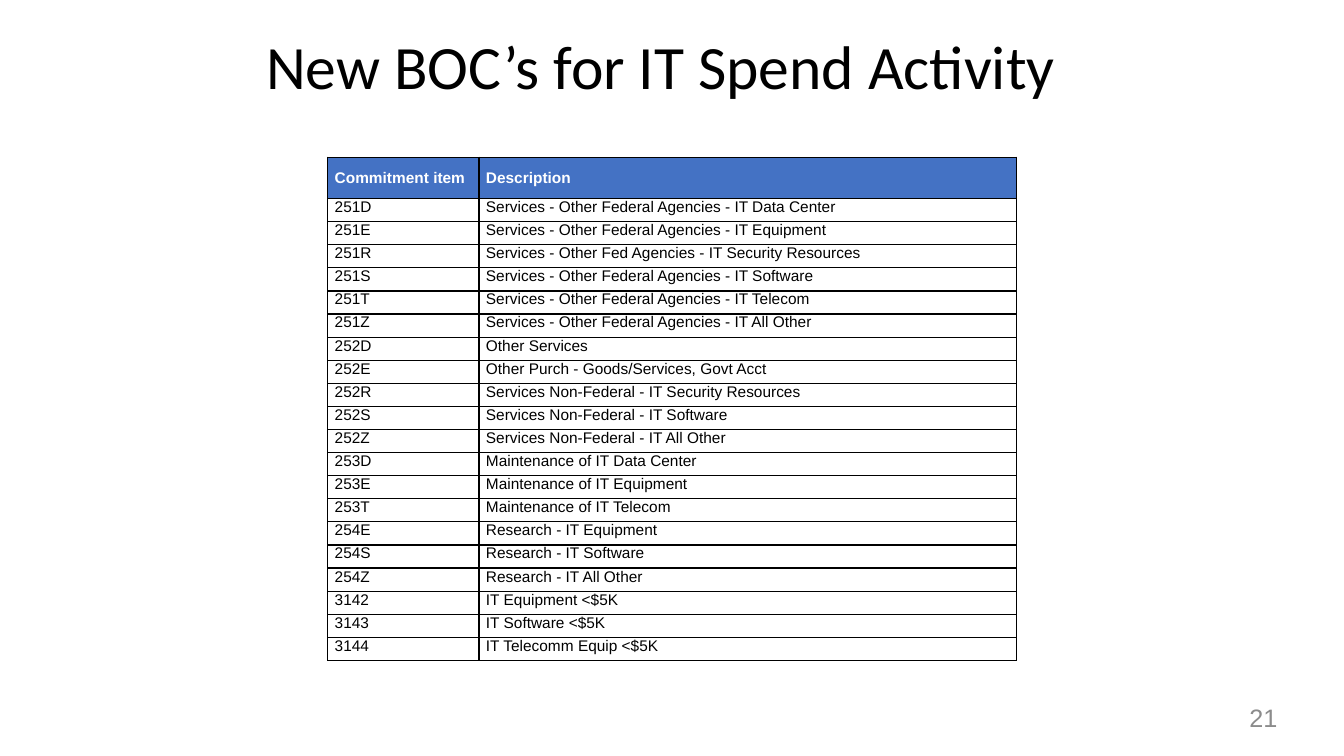
from dataclasses import dataclass

from lxml import etree
from pptx import Presentation
from pptx import util as u
from pptx.dml.color import RGBColor
from pptx.enum import text
from pptx.oxml import ns


@dataclass(frozen=True)
class Theme:
    title_font: str = "Calibri"
    body_font: str = "Arial"
    title_size: int = 44
    table_size: int = 11
    number_size: int = 18
    border_width: int = 1
    ink: str = "000000"
    header_ink: str = "FFFFFF"
    header_fill: str = "4472C4"
    muted: str = "8C8C8C"


THEME = Theme()

HEADER = ("Commitment item", "Description")
BUDGET_CODES = [
    ("251D", "Services - Other Federal Agencies - IT Data Center"),
    ("251E", "Services - Other Federal Agencies - IT Equipment"),
    ("251R", "Services - Other Fed Agencies - IT Security Resources"),
    ("251S", "Services - Other Federal Agencies - IT Software"),
    ("251T", "Services - Other Federal Agencies - IT Telecom"),
    ("251Z", "Services - Other Federal Agencies - IT All Other"),
    ("252D", "Other Services"),
    ("252E", "Other Purch - Goods/Services, Govt Acct"),
    ("252R", "Services Non-Federal - IT Security Resources"),
    ("252S", "Services Non-Federal - IT Software"),
    ("252Z", "Services Non-Federal - IT All Other"),
    ("253D", "Maintenance of IT Data Center"),
    ("253E", "Maintenance of IT Equipment"),
    ("253T", "Maintenance of IT Telecom"),
    ("254E", "Research - IT Equipment"),
    ("254S", "Research - IT Software"),
    ("254Z", "Research - IT All Other"),
    ("3142", "IT Equipment <$5K"),
    ("3143", "IT Software <$5K"),
    ("3144", "IT Telecomm Equip <$5K"),
]


def style(paragraph, font, size, color, bold=False):
    paragraph.font.name = font
    paragraph.font.size = u.Pt(size)
    paragraph.font.bold = bold
    paragraph.font.color.rgb = RGBColor.from_string(color)


def add_line(slide, box, words, font, size, color, align, indent=0):
    """Place one line of text in the box (left, top, width, height in inches)."""
    frame = slide.shapes.add_textbox(*map(u.Inches, box)).text_frame
    frame.word_wrap = True
    frame.margin_left = u.Inches(indent)
    frame.margin_top = frame.margin_right = frame.margin_bottom = 0
    line = frame.paragraphs[0]
    line.text = words
    line.alignment = align
    style(line, font, size, color)


def add_title(slide, box):
    add_line(slide, box, "New BOC’s for IT Spend Activity", THEME.title_font,
             THEME.title_size, THEME.ink, text.PP_ALIGN.LEFT, indent=0.14)


def add_page_number(slide, box):
    add_line(slide, box, "21", THEME.body_font, THEME.number_size,
             THEME.muted, text.PP_ALIGN.RIGHT)


def add_borders(cell):
    properties = cell._tc.get_or_add_tcPr()
    for position, side in enumerate(("lnL", "lnR", "lnT", "lnB")):
        border = etree.Element(ns.qn(f"a:{side}"), w=str(u.Pt(THEME.border_width)))
        fill = etree.SubElement(border, ns.qn("a:solidFill"))
        etree.SubElement(fill, ns.qn("a:srgbClr"), val=THEME.ink)
        properties.insert(position, border)


def fill_cell(cell, words, is_header):
    cell.margin_left = cell.margin_right = u.Inches(0.07)
    cell.margin_top = cell.margin_bottom = 0
    if is_header:
        cell.vertical_anchor = text.MSO_ANCHOR.MIDDLE
        cell.fill.solid()
        cell.fill.fore_color.rgb = RGBColor.from_string(THEME.header_fill)
    else:
        cell.vertical_anchor = text.MSO_ANCHOR.TOP
        cell.fill.background()
    entry = cell.text_frame.paragraphs[0]
    entry.text = words
    style(entry, THEME.body_font, THEME.table_size,
          THEME.header_ink if is_header else THEME.ink, bold=is_header)
    add_borders(cell)


def add_code_table(slide, box):
    records = [HEADER, *BUDGET_CODES]
    left, top, width, height = box
    code_width, header_height = 1.5, 0.41
    table = slide.shapes.add_table(len(records), len(HEADER), *map(u.Inches, box)).table
    table.horz_banding = False

    # Narrow code column, tall header, equal rows below
    table.columns[0].width = u.Inches(code_width)
    table.columns[1].width = u.Inches(width - code_width)
    row_height = (height - header_height) / len(BUDGET_CODES)
    for index, record in enumerate(records):
        table.rows[index].height = u.Inches(row_height if index else header_height)
        for column, words in enumerate(record):
            fill_cell(table.cell(index, column), words, is_header=index == 0)


def main():
    deck = Presentation()
    deck.slide_width, deck.slide_height = u.Inches(13.33), u.Inches(7.5)
    slide = deck.slides.add_slide(deck.slide_layouts[6])
    add_title(slide, (2.5, 0.28, 10.35, 0.75))
    add_code_table(slide, (3.25, 1.56, 6.83, 5))
    add_page_number(slide, (9.6, 6.97, 3.07, 0.3))
    deck.save("out.pptx")


if __name__ == "__main__":
    main()
